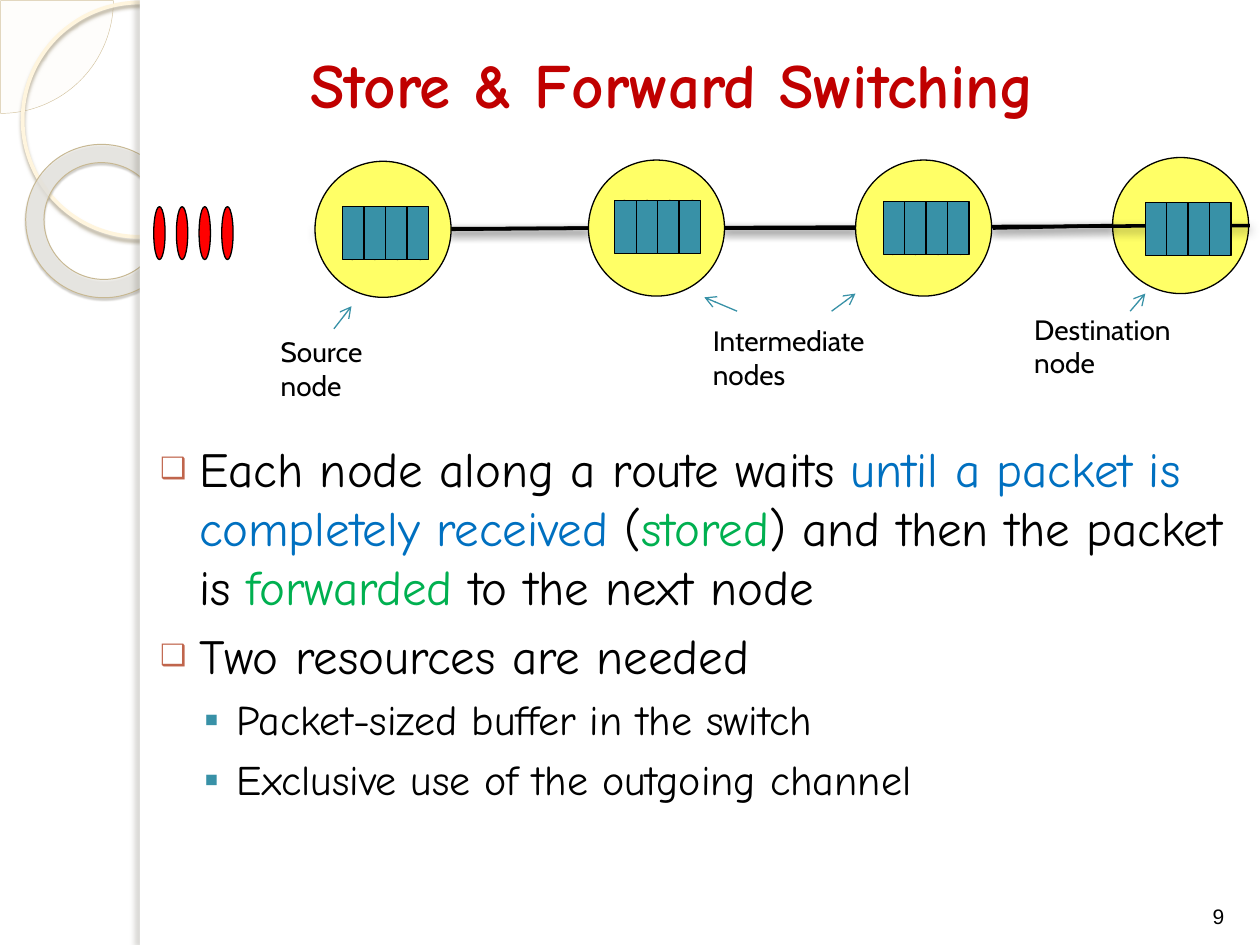
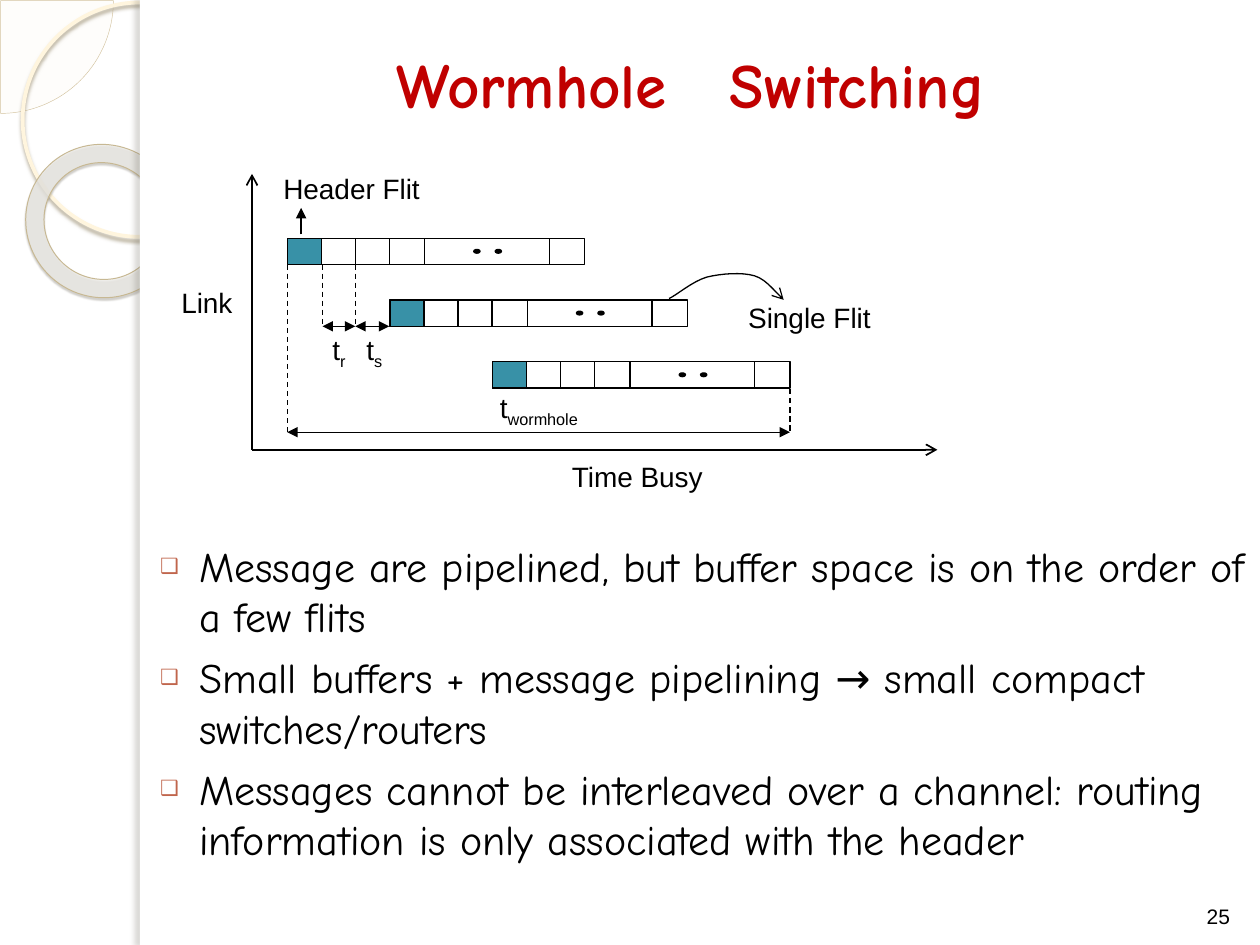
import pptx
import pptx.dml.color
import pptx.enum.dml
import pptx.enum.shapes
import pptx.enum.text
import pptx.oxml.ns
import pptx.util
from lxml import etree

Inches = pptx.util.Inches
Pt = pptx.util.Pt
RGBColor = pptx.dml.color.RGBColor
MSO_SHAPE = pptx.enum.shapes.MSO_SHAPE
STRAIGHT = pptx.enum.shapes.MSO_CONNECTOR.STRAIGHT
PP_ALIGN = pptx.enum.text.PP_ALIGN
MSO_ANCHOR = pptx.enum.text.MSO_ANCHOR
NO_AUTOFIT = pptx.enum.text.MSO_AUTO_SIZE.NONE
qn = pptx.oxml.ns.qn

BLACK = RGBColor(0x00, 0x00, 0x00)
WHITE = RGBColor(0xFF, 0xFF, 0xFF)
TITLE_RED = RGBColor(0xC0, 0x00, 0x00)
PACKET_RED = RGBColor(0xFF, 0x00, 0x00)
NODE_YELLOW = RGBColor(0xFF, 0xFF, 0x66)
TEAL = RGBColor(0x38, 0x91, 0xA7)
RUST = RGBColor(0xC0, 0x65, 0x4C)
BLUE = RGBColor(0x00, 0x70, 0xC0)
GREEN = RGBColor(0x00, 0xB0, 0x50)
CREAM = RGBColor(0xFE, 0xFA, 0xF4)
SAND = RGBColor(0xD3, 0xC3, 0x9F)
RING_CREAM = RGBColor(0xFF, 0xF5, 0xDE)
RING_GREY = RGBColor(0xEC, 0xEB, 0xE7)
RING_EDGE = RGBColor(0xC7, 0xB8, 0x93)

TITLE_FORMAT = {"name": "Comic Neue", "size": Pt(36), "bold": True}
ROUTE_SHADOW = ("000000", 43, 5, 2, 90)


def style(item, line=BLACK, width=0.75, fill=None, alpha=None, dash=None,
          head=None, tail=None, shadow=None):
    """Format a shape or connector; shadow is (colour, opacity %, blur, distance, angle)."""
    if hasattr(item, "fill"):
        if fill is None:
            item.fill.background()
        else:
            item.fill.solid()
            item.fill.fore_color.rgb = fill
            if alpha is not None:
                colour = item._element.spPr.find(".//" + qn("a:srgbClr"))
                etree.SubElement(colour, qn("a:alpha"), val=str(alpha * 1000))
    if line is None:
        item.line.fill.background()
    else:
        item.line.color.rgb = line
        item.line.width = Pt(width)
        if dash:
            item.line.dash_style = dash
    for end, arrow in (("a:headEnd", head), ("a:tailEnd", tail)):
        if arrow:
            etree.SubElement(item.line._get_or_add_ln(), qn(end), type=arrow)
    effects = etree.SubElement(item._element.spPr, qn("a:effectLst"))
    if shadow:
        tint, opacity, blur, distance, angle = shadow
        outer = etree.SubElement(effects, qn("a:outerShdw"), blurRad=str(Pt(blur)),
                                 dist=str(Pt(distance)), dir=str(angle * 60000),
                                 algn="tl", rotWithShape="0")
        colour = etree.SubElement(outer, qn("a:srgbClr"), val=tint)
        etree.SubElement(colour, qn("a:alpha"), val=str(opacity * 1000))
    return item


def add_label(slide, box, text, subscript="", font="Arial", size=16, wrap=False):
    label = slide.shapes.add_textbox(*map(Inches, box))
    label.text_frame.word_wrap = wrap
    for part in filter(None, (text, subscript)):
        run = label.text_frame.paragraphs[0].add_run()
        run.text = part
        for name, value in {"name": font, "size": Pt(size)}.items():
            setattr(run.font, name, value)
        run.font.color.rgb = BLACK
        if part == subscript:
            run.font._element.set("baseline", "-25000")
    return label


deck = pptx.Presentation()
deck.slide_width, deck.slide_height = Inches(10), Inches(7.5)
layout = deck.slide_layouts[1]

pages = [
    {"title": "Store & Forward Switching", "title_box": (1.08, 0.33, 8.51, 0.67),
     "number": "9", "list_box": (1.08, 3.43, 8.78, 3.63),
     "sizes": (28, 24), "bullet_size": 60,
     "points": [
         (0, [("Each node along a route waits ", BLACK),
              ("until a packet is completely received ", BLUE),
              ("(", BLACK), ("stored", GREEN),
              (") and then the packet is ", BLACK), ("forwarded", GREEN),
              (" to the next node", BLACK)]),
         (0, [("Two resources are needed", BLACK)]),
         (1, [("Packet-sized buffer in the switch", BLACK)]),
         (1, [("Exclusive use of the outgoing channel", BLACK)])]},
    {"title": "Wormhole　Switching", "title_box": (1.29, 0.25, 8.38, 0.83),
     "number": "25", "list_box": (1.08, 4.24, 8.92, 3.01),
     "sizes": (24,), "bullet_size": 50,
     "points": [
         (0, [("Message are pipelined, but buffer space is on the order of "
               "a few flits", BLACK)]),
         (0, [("Small buffers + message pipelining → small compact "
               "switches/routers", BLACK)]),
         (0, [("Messages cannot be interleaved over a channel: routing "
               "information is only associated with the header", BLACK)])]},
]

# Titles, lists and page numbers
for page in pages:
    slide = deck.slides.add_slide(layout)
    title, points = slide.shapes.title, slide.placeholders[1]
    for holder, box in ((title, page["title_box"]), (points, page["list_box"])):
        holder.left, holder.top, holder.width, holder.height = map(Inches, box)
        holder.text_frame.auto_size = NO_AUTOFIT
        holder.text_frame.word_wrap = True
    title.text_frame.vertical_anchor = MSO_ANCHOR.MIDDLE
    heading = title.text_frame.paragraphs[0]
    heading.alignment = PP_ALIGN.CENTER
    heading_run = heading.add_run()
    heading_run.text = page["title"]
    for name, value in TITLE_FORMAT.items():
        setattr(heading_run.font, name, value)
    heading_run.font.color.rgb = TITLE_RED

    for i, (level, phrases) in enumerate(page["points"]):
        frame = points.text_frame
        point = frame.add_paragraph() if i else frame.paragraphs[0]
        point.level = level
        point.space_before = Pt((6, 5.5)[level])
        margin, hanging, mark, colour, percent = (
            (0.4, 0.31, "❑", RUST, page["bullet_size"]),
            (0.7, 0.26, "▪", TEAL, 100))[level]
        pPr = point._p.get_or_add_pPr()
        pPr.set("marL", str(Inches(margin)))
        pPr.set("indent", str(-Inches(hanging)))
        bullet_colour = etree.SubElement(pPr, qn("a:buClr"))
        etree.SubElement(bullet_colour, qn("a:srgbClr"), val=str(colour))
        etree.SubElement(pPr, qn("a:buSzPct"), val=str(percent * 1000))
        etree.SubElement(pPr, qn("a:buChar"), char=mark)
        for text, colour in phrases:
            run = point.add_run()
            run.text = text
            for name, value in {"name": "Comic Neue",
                                "size": Pt(page["sizes"][level])}.items():
                setattr(run.font, name, value)
            run.font.color.rgb = colour

    number = add_label(slide, (9.42, 6.9, 0.5, 0.52), page["number"], size=12, wrap=True)
    number.text_frame.vertical_anchor = MSO_ANCHOR.BOTTOM
    number.text_frame.paragraphs[0].alignment = PP_ALIGN.CENTER

store_forward, wormhole = deck.slides

# Side decoration, drawn once and moved to the shared layout
decoration = [
    (MSO_SHAPE.PIE, (-0.89, -0.89, 1.79, 1.79), [0, 54], 0,
     {"fill": CREAM, "alpha": 33, "line": SAND, "width": 0.25}),
    (MSO_SHAPE.OVAL, (0.18, 0.02, 1.86, 1.86), [], 0,
     {"line": RING_CREAM, "width": 2.15, "shadow": ("B0A68F", 85, 2, 2, 90)}),
    (MSO_SHAPE.DONUT, (0.2, 1.15, 1.23, 1.21), [0.12], 38.6,
     {"fill": RING_GREY, "alpha": 75, "line": RING_EDGE, "width": 0.58,
      "shadow": ("5A5444", 35, 1, 1.2, 75)}),
    (MSO_SHAPE.RECTANGLE, (1.11, 0, 8.89, 7.5), [], 0, {"fill": WHITE, "line": None}),
    (MSO_SHAPE.RECTANGLE, (1.11, 0, 0.08, 7.5), [], 0,
     {"fill": WHITE, "line": None, "shadow": ("736F63", 25, 3, 3, 180)}),
]
for i, (kind, box, adjustments, turn, look) in enumerate(decoration):
    ornament = style(store_forward.shapes.add_shape(kind, *map(Inches, box)), **look)
    ornament.rotation = turn
    for j, value in enumerate(adjustments):
        ornament.adjustments[j] = value
    ornament._element.nvSpPr.cNvPr.set("id", str(100 + i))
    layout.shapes._spTree.insert(2 + i, ornament._element)

# Store & forward: the route from source to destination
shapes = store_forward.shapes
NODE, BUFFER_W, BUFFER_H = 1.08, 0.17, 0.42
PACKET_W, PACKET_GAP = 0.09, 0.18
nodes = [(2.5, 1.28), (4.67, 1.27), (6.79, 1.27), (8.83, 1.25)]
buffers = [(2.72, 1.64), (4.88, 1.59), (7.01, 1.6), (9.09, 1.61)]
links = [((2.5, 1.82), (9.92, 1.79)), ((3.58, 1.82), (4.67, 1.81)),
         ((5.75, 1.81), (6.79, 1.81)), ((7.88, 1.81), (8.83, 1.79))]
packet_trains = [(1.22, 1.64)] + [(x + 0.03, y) for x, y in buffers[:3]]

# The route runs over the destination and under the other nodes
for i in (3, 0, 1, 2):
    x, y = nodes[i]
    style(shapes.add_shape(MSO_SHAPE.OVAL, *map(Inches, (x, y, NODE, NODE))),
          fill=NODE_YELLOW)
    if i == 3:
        for start, end in links:
            style(shapes.add_connector(STRAIGHT, *map(Inches, start + end)),
                  width=2, shadow=ROUTE_SHADOW)
for kind, starts, width, pitch, fill in (
        (MSO_SHAPE.OVAL, packet_trains, PACKET_W, PACKET_GAP, PACKET_RED),
        (MSO_SHAPE.RECTANGLE, buffers, BUFFER_W, BUFFER_W, TEAL)):
    for x, y in starts:
        for slot in range(4):
            box = (x + slot * pitch, y, width, BUFFER_H)
            style(shapes.add_shape(kind, *map(Inches, box)), fill=fill)

for box, text in (((2.13, 2.61, 1, 0.64), "Source node"),
                  ((5.56, 2.52, 1.5, 0.64), "Intermediate nodes"),
                  ((8.11, 2.43, 1.35, 0.64), "Destination node")):
    add_label(store_forward, box, text, font="Cabin", wrap=True)
for pointer in ((2.65, 2.61, 2.79, 2.43), (5.85, 2.47, 5.59, 2.36),
                (6.6, 2.47, 6.79, 2.33), (8.97, 2.47, 9.09, 2.33)):
    style(shapes.add_connector(STRAIGHT, *map(Inches, pointer)), line=TEAL, tail="arrow")

# Wormhole: messages of flits on a time and link chart
shapes = wormhole.shapes
FLIT_W, FLIT_H, MESSAGE_W = 0.27, 0.21, 2.36
for i in range(3):
    x, y = 2.28 + i * 0.815, 1.89 + i * 0.49
    for width, fill in ((MESSAGE_W, None), (FLIT_W, TEAL)):
        style(shapes.add_shape(MSO_SHAPE.RECTANGLE, *map(Inches, (x, y, width, FLIT_H))),
              fill=fill)
    for offset in (0.54, 0.81, 1.09, 2.08):
        divider = (x + offset, y, x + offset, y + FLIT_H)
        style(shapes.add_connector(STRAIGHT, *map(Inches, divider)))
    for offset in (1.48, 1.65):
        dot = (x + offset, y + 0.09, 0.05, 0.03)
        style(shapes.add_shape(MSO_SHAPE.OVAL, *map(Inches, dot)), fill=BLACK)

DASHED = {"dash": pptx.enum.dml.MSO_LINE.DASH}
SPAN = {"head": "triangle", "tail": "triangle"}
AXIS = {"width": 1, "tail": "arrow"}
for ends, look in (
        ((2, 3.57, 2, 1.38), AXIS), ((2, 3.57, 7.44, 3.57), AXIS),
        ((2.28, 2.1, 2.28, 3.43), DASHED), ((2.56, 2.1, 2.56, 2.59), DASHED),
        ((2.82, 2.1, 2.82, 2.59), DASHED), ((6.27, 3.09, 6.27, 3.43), DASHED),
        ((2.56, 2.59, 2.82, 2.59), SPAN), ((2.82, 2.59, 3.09, 2.59), SPAN),
        ((2.28, 3.43, 6.27, 3.43), SPAN),
        ((2.39, 1.86, 2.39, 1.65), {"tail": "triangle"})):
    style(shapes.add_connector(STRAIGHT, *map(Inches, ends)), **look)

# Curved pointer to the single flit, traced along three Bezier segments
curve = [(5.31, 2.37), (5.36, 2.35), (5.5, 2.23), (5.61, 2.2), (5.73, 2.17),
         (5.89, 2.16), (5.99, 2.19), (6.09, 2.22), (6.17, 2.34), (6.22, 2.38)]
STEPS = 8
trace = []
for first in range(0, 9, 3):
    for step in range(1, STEPS + 1):
        t = step / STEPS
        weights = ((1 - t) ** 3, 3 * t * (1 - t) ** 2, 3 * t ** 2 * (1 - t), t ** 3)
        trace.append(tuple(
            Inches(sum(w * p[axis] for w, p in zip(weights, curve[first:first + 4])))
            for axis in (0, 1)))
pointer = shapes.build_freeform(*map(Inches, curve[0]))
pointer.add_line_segments(trace, close=False)
style(pointer.convert_to_shape(), tail="arrow")

for x, y, width, text, subscript in (
        (1.34, 2.22, 0.61, "Link", ""), (4.44, 3.6, 1.25, "Time Busy", ""),
        (2.54, 2.59, 0.31, "t", "r"), (2.81, 2.59, 0.34, "t", "s"),
        (3.87, 3.05, 0.93, "t", "wormhole"), (5.84, 2.34, 1.17, "Single Flit", ""),
        (2.15, 1.31, 1.29, "Header Flit", "")):
    add_label(wormhole, (x, y, width, 0.37), text, subscript)

deck.save("out.pptx")
